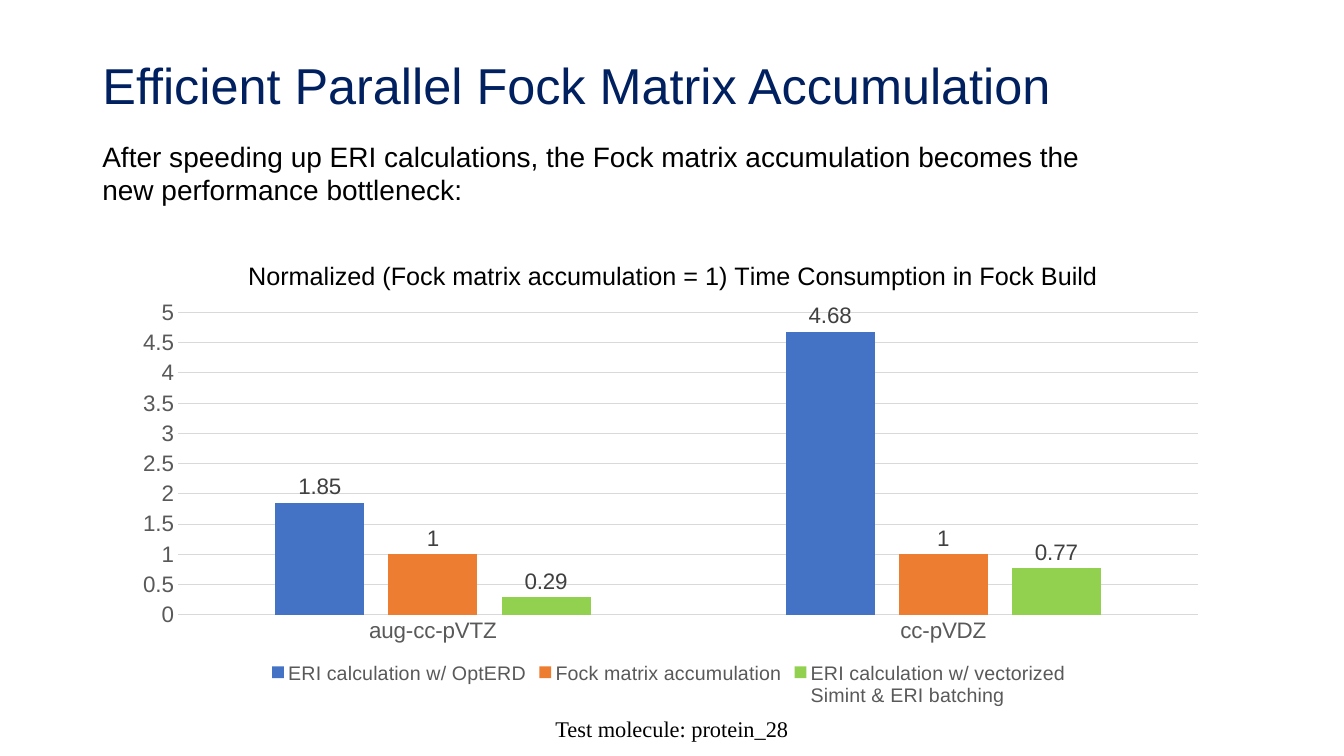
from lxml import etree
from pptx import Presentation
from pptx import util as u
from pptx.chart.data import CategoryChartData
from pptx.dml.color import RGBColor
from pptx.enum import chart as ch, text
from pptx.oxml.ns import qn

Pt = u.Pt


def style(font, size, color, name="Arial"):
    font.size, font.name, font.bold = Pt(size), name, False
    font.color.rgb = RGBColor.from_string(color)


def place(parent, before, **fractions):
    """Fix the layout of a chart part, in fractions of the chart size."""
    for old in parent.findall(qn("c:layout")):
        parent.remove(old)
    layout = etree.Element(qn("c:layout"))
    manual = etree.SubElement(layout, qn("c:manualLayout"))
    if "w" in fractions:
        etree.SubElement(manual, qn("c:layoutTarget")).set("val", "inner")
    for key in ("xMode", "yMode"):
        etree.SubElement(manual, qn("c:" + key)).set("val", "edge")
    for key, value in fractions.items():
        etree.SubElement(manual, qn("c:" + key)).set("val", str(value))
    parent.insert(before, layout)


prs = Presentation()
prs.slide_width, prs.slide_height = Pt(960), Pt(540)
s = prs.slides.add_slide(prs.slide_layouts[5])

# Title
title = s.shapes.title
title.left, title.top, title.width, title.height = Pt(66), Pt(28.8), Pt(828), Pt(69)
tf = title.text_frame
tf.text = "Efficient Parallel Fock Matrix Accumulation"
tf.vertical_anchor = text.MSO_ANCHOR.MIDDLE
tf.auto_size = text.MSO_AUTO_SIZE.NONE
p = tf.paragraphs[0]
p.alignment, p.line_spacing = text.PP_ALIGN.LEFT, 0.9
style(p.runs[0].font, 36, "002060")

# Chart
data = CategoryChartData()
data.categories = ["aug-cc-pVTZ", "cc-pVDZ"]
data.add_series("ERI calculation w/ OptERD", (1.85, 4.68))
data.add_series("Fock matrix accumulation", (1, 1))
data.add_series("ERI calculation w/ vectorized \nSimint & ERI batching", (0.29, 0.77))
chart = s.shapes.add_chart(ch.XL_CHART_TYPE.COLUMN_CLUSTERED, Pt(87.8), Pt(165),
                           Pt(784), Pt(342.7), data).chart
style(chart.font, 10, "000000", "Calibri")

chart.has_title = True
tf = chart.chart_title.text_frame
tf.text = "Normalized (Fock matrix accumulation = 1) Time Consumption in Fock Build"
style(tf.paragraphs[0].runs[0].font, 18, "000000")
chart.chart_title.include_in_layout = False
place(chart.element.find(".//" + qn("c:title")), 1, x=0.11, y=0.05)
place(chart.element.find(".//" + qn("c:plotArea")), 0, x=0.05, y=0.17, w=0.93, h=0.63)

chart.has_legend = True
chart.legend.position = ch.XL_LEGEND_POSITION.BOTTOM
chart.legend.include_in_layout = False
style(chart.legend.font, 14, "595959")

cat, val = chart.category_axis, chart.value_axis
for axis in (cat, val):
    axis.major_tick_mark = axis.minor_tick_mark = ch.XL_TICK_MARK.NONE
    style(axis.tick_labels.font, 16, "595959")
val.minimum_scale, val.maximum_scale, val.major_unit = 0, 5, 0.5
val.has_major_gridlines = True
val.format.line.fill.background()
for line in (cat.format.line, val.major_gridlines.format.line):
    line.color.rgb = RGBColor.from_string("D9D9D9")
    line.width = Pt(0.75)

plot = chart.plots[0]
plot.gap_width, plot.overlap, plot.vary_by_categories = 219, -27, False
for series, color in zip(plot.series, ("4472C4", "ED7D31", "92D050")):
    series.format.fill.solid()
    series.format.fill.fore_color.rgb = RGBColor.from_string(color)
    labels = series.data_labels
    labels.show_value = True
    labels.position = ch.XL_LABEL_POSITION.OUTSIDE_END
    style(labels.font, 16, "404040")

# Text under the title and under the chart
left, center = text.PP_ALIGN.LEFT, text.PP_ALIGN.CENTER
for words, box, align, size, font in (
    ("Test molecule: protein_28", (307.4, 507.6, 345, 26.6), center, 16, "Times New Roman"),
    ("After speeding up ERI calculations, the Fock matrix accumulation becomes the "
     "new performance bottleneck:", (66, 95.8, 749, 55.7), left, 20, "Arial"),
):
    tf = s.shapes.add_textbox(*map(Pt, box)).text_frame
    tf.word_wrap, tf.auto_size = True, text.MSO_AUTO_SIZE.SHAPE_TO_FIT_TEXT
    tf.text = words
    p = tf.paragraphs[0]
    p.alignment = align
    style(p.runs[0].font, size, "000000", font)

prs.save("out.pptx")
